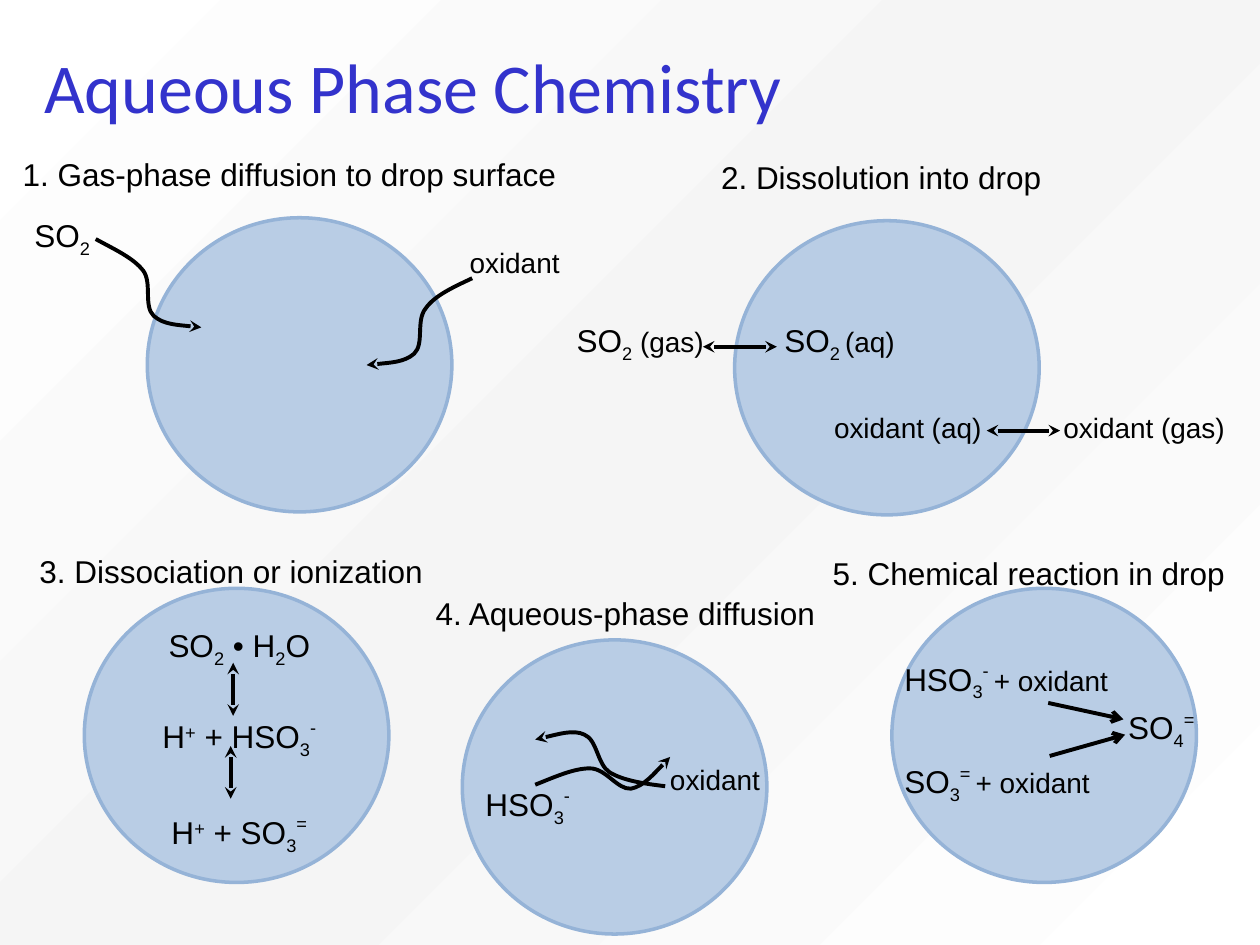
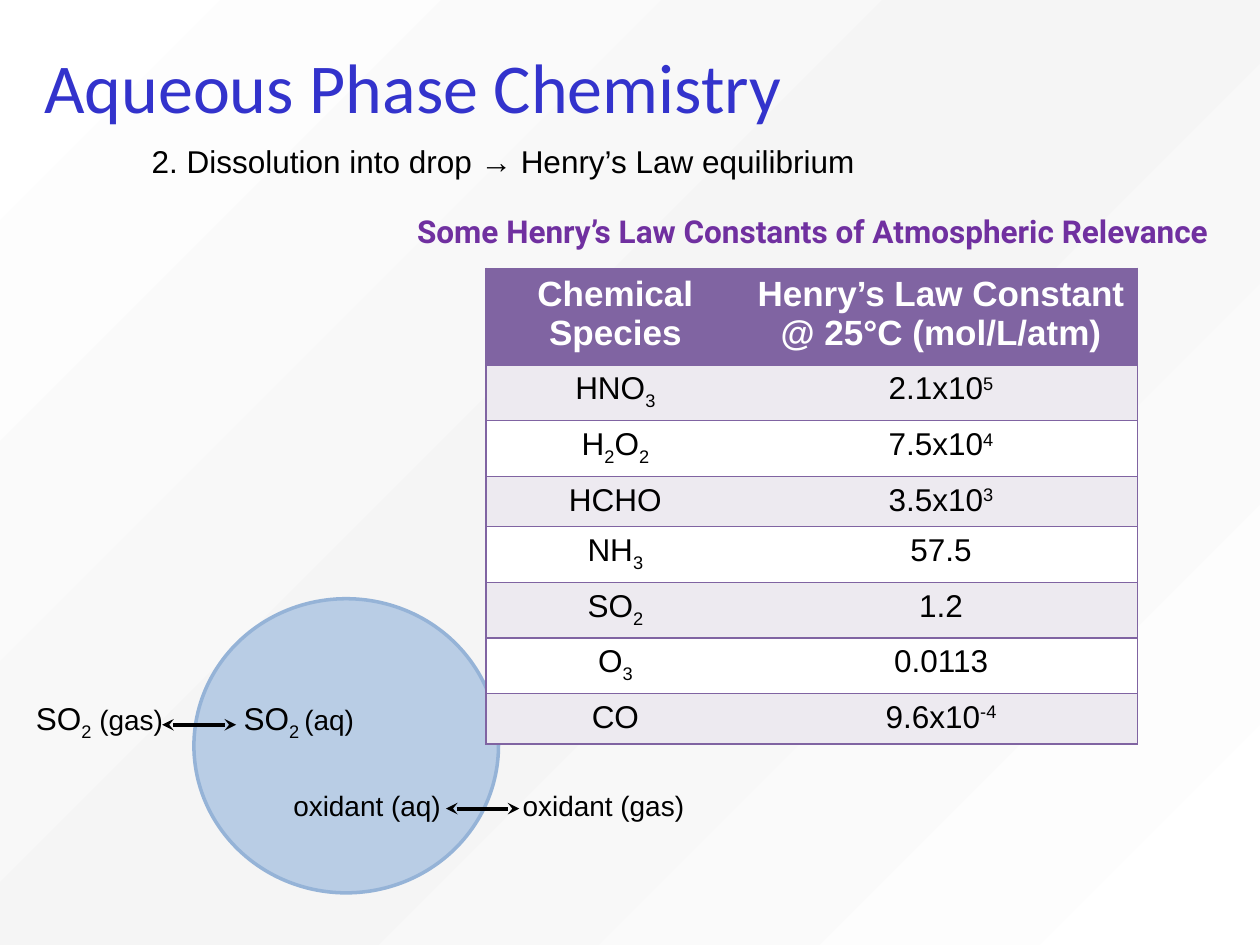
"""Build two slides on aqueous phase chemistry in cloud drops."""
from lxml.etree import SubElement
from pptx import Presentation
from pptx.dml.color import RGBColor
from pptx.enum.shapes import MSO_CONNECTOR, MSO_SHAPE
from pptx.enum.text import MSO_ANCHOR, PP_ALIGN
from pptx.oxml import parse_xml
from pptx.oxml.ns import nsdecls, qn
from pptx.util import Cm, Pt

COLORS = {
    "title": "3333CC", "text": "000000", "drop": "B9CDE5", "rim": "95B3D7",
    "caption": "7030A0", "table": "8064A2", "band": "EDEAF0",
    "white": "FFFFFF", "shade": "F5F5F5",
}
TITLE = "Aqueous Phase Chemistry"
DROP_WIDTH, DROP_HEIGHT = 6.14, 5.93
LEFT, CENTER, RIGHT = PP_ALIGN.LEFT, PP_ALIGN.CENTER, PP_ALIGN.RIGHT

# Markup: parts are split by "|"; a first letter from SCRIPTS shifts the part,
# and "<" makes it small.
SCRIPTS = {"_": -25000, "^": 30000, "*": 44000}

STEP_HEADINGS = [
    ("1. Gas-phase diffusion to drop surface", -0.2, 3.0, 12.07),
    ("2. Dissolution into drop", 14.17, 3.07, 7.19),
    ("3. Dissociation or ionization", 0, 11.0, 9.32),
    ("4. Aqueous-phase diffusion", 8.26, 11.86, 8.69),
    ("5. Chemical reaction in drop", 16.08, 11.05, 9.32),
]
GAS_DIFFUSION = {
    "labels": [("SO|_2", -2.77, -0.15, 2.11), ("<oxidant", 5.92, 0.43, 2.97)],
    "curves": [
        [(-1.04, 0.43), (-0.66, 0.64), (-0.28, 0.81), (-0.08, 1.07), (0.1, 1.32),
         (-0.08, 1.78), (0.13, 1.98), (0.33, 2.16), (1.09, 2.21), (1.09, 2.21)],
        [(6.55, 1.22), (6.17, 1.4), (5.79, 1.57), (5.61, 1.83), (5.41, 2.08),
         (5.59, 2.54), (5.38, 2.74), (5.18, 2.92), (4.42, 2.97), (4.42, 2.97)],
    ],
}
DISSOLUTION = {
    "labels": [
        ("SO|_2|< (gas)", -3.6, 1.9, 3.39), ("SO|_2 |<(aq)", 0.42, 1.9, 3.39),
        ("<oxidant (gas)", 6.35, 3.71, 3.81), ("<oxidant (aq)", 1.69, 3.71, 3.6),
    ],
    "exchanges": [(-0.64, 2.54, 0.85, 2.54), (5.08, 4.23, 6.56, 4.23)],
}
IONIZATION = {
    "lists": [(1.22, 0.64, 3.81, 4.65, [
        ("SO|_2| • H|_2|O", CENTER, 27),
        ("H|^+| + HSO|_3|*-", CENTER, 30),
        ("H|^+| + SO|_3|*=", CENTER, 6),
    ])],
    "exchanges": [(3.0, 2.57, 3.0, 1.5), (2.95, 4.24, 2.95, 3.18)],
}
DROP_DIFFUSION = {
    "labels": [("HSO|_3|*-", 0.1, 2.79, 2.44), ("<oxidant", 3.61, 2.34, 2.97)],
    "curves": [
        [(1.47, 2.92), (1.85, 2.77), (2.24, 2.59), (2.57, 2.59), (2.9, 2.59),
         (3.12, 3.02), (3.4, 3.0), (3.66, 2.95), (4.19, 2.36), (4.19, 2.36)],
        [(4.09, 2.95), (3.68, 2.9), (3.25, 2.84), (2.97, 2.67), (2.72, 2.51),
         (2.72, 2.01), (2.46, 1.91), (2.24, 1.8), (1.47, 2.01), (1.47, 2.01)],
    ],
}
REACTION = {
    "lists": [(0, 1.3, 6.35, 2.9, [
        ("HSO|_3|*- |<+ oxidant", LEFT, 3),
        ("SO|_4|*=", RIGHT, 6),
        ("SO|_3|*= |<+ oxidant", LEFT, 6),
    ])],
    "reactions": [(3.15, 2.31, 4.67, 2.64), (3.18, 3.38, 4.7, 2.95)],
}
STEP_DROPS = [
    (2.97, 4.39, GAS_DIFFUSION), (14.81, 4.45, DISSOLUTION), (1.7, 11.86, IONIZATION),
    (9.32, 12.9, DROP_DIFFUSION), (17.98, 11.86, REACTION),
]
HENRY_HEADING = ("2. Dissolution into drop → Henry’s Law equilibrium", 2.74, 2.74, 14.81)
HENRY_CAPTION = ("Some Henry’s Law Constants of Atmospheric Relevance", 7.42, 4.14, 17.93)
HENRY_ROWS = [
    ("Chemical Species", "Henry’s Law Constant @ 25°C (mol/L/atm)"),
    ("HNO|_3", "2.1x10|^5"), ("H|_2|O|_2", "7.5x10|^4"), ("HCHO", "3.5x10|^3"),
    ("NH|_3", "57.5"), ("SO|_2", "1.2"), ("O|_3", "0.0113"), ("CO", "9.6x10|^-4"),
]
HENRY_COLUMNS = (5.21, 7.92)


def color(name):
    return RGBColor.from_string(COLORS[name])


def write(para, markup, align=CENTER, size=18, font="Arial", ink="text", bold=False):
    para.alignment = align
    para.font.name, para.font.size, para.font.bold = font, Pt(size), bold
    para.font.color.rgb = color(ink)
    for part in markup.split("|"):
        span = para.add_run()
        span.text = part.lstrip("<") if part[0] == "<" else part
        if part[0] == "<":
            span.font.size = Pt(16)
        elif part[0] in SCRIPTS:
            span.text = part[1:]
            span._r.get_or_add_rPr().set("baseline", str(SCRIPTS[part[0]]))


def add_box(page, left, top, width, height=1.02):
    box = page.shapes.add_textbox(Cm(left), Cm(top), Cm(width), Cm(height))
    box.text_frame.word_wrap = True
    return box.text_frame


def add_label(page, markup, left, top, width, **style):
    write(add_box(page, left, top, width).paragraphs[0], markup, **style)


def add_list(page, left, top, width, height, lines):
    frame = add_box(page, left, top, width, height)
    for index, (markup, align, gap) in enumerate(lines):
        para = frame.add_paragraph() if index else frame.paragraphs[0]
        write(para, markup, align)
        para.space_after = Pt(gap)


def style_line(shape, **ends):
    shape.line.color.rgb = color("text")
    shape.line.width = Pt(2.25)
    for end, kind in ends.items():
        SubElement(shape.line._get_or_add_ln(), qn("a:" + end), type=kind)


def add_arrow(page, begin_x, begin_y, end_x, end_y, **ends):
    arrow = page.shapes.add_connector(
        MSO_CONNECTOR.STRAIGHT, Cm(begin_x), Cm(begin_y), Cm(end_x), Cm(end_y))
    style_line(arrow, **ends)
    SubElement(arrow._element.spPr, qn("a:effectLst"))


def add_curve(page, points):
    start, *rest = [(Cm(x), Cm(y)) for x, y in points]
    builder = page.shapes.build_freeform(*start)
    builder.add_line_segments(rest, close=False)
    curve = builder.convert_to_shape()
    curve.shadow.inherit = False
    curve.fill.background()
    style_line(curve, tailEnd="stealth")
    outline = curve._element.find(".//" + qn("a:path"))
    segments = outline.findall(qn("a:lnTo"))
    for first in range(0, len(segments), 3):
        bezier = SubElement(outline, qn("a:cubicBezTo"))
        for segment in segments[first:first + 3]:
            bezier.append(segment[0])
            outline.remove(segment)


def add_drop(page, left, top, content):
    drop = page.shapes.add_shape(
        MSO_SHAPE.OVAL, Cm(left), Cm(top), Cm(DROP_WIDTH), Cm(DROP_HEIGHT))
    drop.shadow.inherit = False
    drop.fill.solid()
    drop.fill.fore_color.rgb = color("drop")
    drop.line.color.rgb = color("rim")
    drop.line.width = Pt(2)
    for markup, x, y, width in content.get("labels", []):
        add_label(page, markup, left + x, top + y, width)
    for x, y, *rest in content.get("lists", []):
        add_list(page, left + x, top + y, *rest)
    for kind, ends in (("exchanges", {"headEnd": "stealth", "tailEnd": "stealth"}),
                       ("reactions", {"tailEnd": "arrow"})):
        for x1, y1, x2, y2 in content.get(kind, []):
            add_arrow(page, left + x1, top + y1, left + x2, top + y2, **ends)
    for points in content.get("curves", []):
        add_curve(page, [(left + x, top + y) for x, y in points])


def add_border(cell, side, visible):
    line = SubElement(cell._tc.get_or_add_tcPr(), qn("a:ln" + side), w=str(Pt(1)))
    if visible:
        fill = SubElement(line, qn("a:solidFill"))
        SubElement(fill, qn("a:srgbClr"), val=COLORS["table"])
    else:
        SubElement(line, qn("a:noFill"))


def add_henry_table(page):
    table = page.shapes.add_table(
        len(HENRY_ROWS), len(HENRY_COLUMNS), Cm(9.8), Cm(5.41),
        Cm(sum(HENRY_COLUMNS)), Cm(7.83)).table
    for column, width in zip(table.columns, HENRY_COLUMNS):
        column.width = Cm(width)
    for row_index, texts in enumerate(HENRY_ROWS):
        header = row_index == 0
        table.rows[row_index].height = Cm(1.6 if header else 0.89)
        fill = "table" if header else "band" if row_index % 2 else "white"
        style = {"size": 20, "ink": "white", "bold": True} if header else {}
        for column_index, markup in enumerate(texts):
            cell = table.cell(row_index, column_index)
            for side in "LRTB":
                inner = side == "LR"[1 - column_index]
                add_border(cell, side, not inner)
            cell.fill.solid()
            cell.fill.fore_color.rgb = color(fill)
            write(cell.text_frame.paragraphs[0], markup, **style)


def set_background(master):
    master.background.fill.gradient()
    gradient = master.element.find(".//" + qn("p:bgPr") + "/" + qn("a:gradFill"))
    stops = "".join(
        f'<a:gs pos="{place}"><a:srgbClr val="{COLORS[name]}"/></a:gs>'
        for place, name in ((0, "white"), (50000, "shade"), (100000, "white")))
    gradient.getparent().replace(gradient, parse_xml(
        f'<a:gradFill {nsdecls("a")} rotWithShape="1"><a:gsLst>{stops}</a:gsLst>'
        '<a:lin ang="2700000" scaled="0"/></a:gradFill>'))


def add_page(deck):
    page = deck.slides.add_slide(deck.slide_layouts[5])
    title = page.shapes.title
    title.left, title.top, title.width, title.height = Cm(0.64), Cm(0.42), Cm(22.86), Cm(2.62)
    title.text_frame.vertical_anchor = MSO_ANCHOR.MIDDLE
    write(title.text_frame.paragraphs[0], TITLE, LEFT, 40, "Calibri", "title")
    return page


def main():
    deck = Presentation()
    deck.slide_width, deck.slide_height = Cm(25.4), Cm(19.05)
    set_background(deck.slide_master)

    steps = add_page(deck)
    for drop in STEP_DROPS:
        add_drop(steps, *drop)
    for heading in STEP_HEADINGS:
        add_label(steps, *heading)

    henry = add_page(deck)
    add_label(henry, *HENRY_HEADING)
    add_drop(henry, 3.91, 12.07, DISSOLUTION)
    add_label(henry, *HENRY_CAPTION, font="Roboto", ink="caption", bold=True)
    add_henry_table(henry)
    deck.save("out.pptx")


if __name__ == "__main__":
    main()
